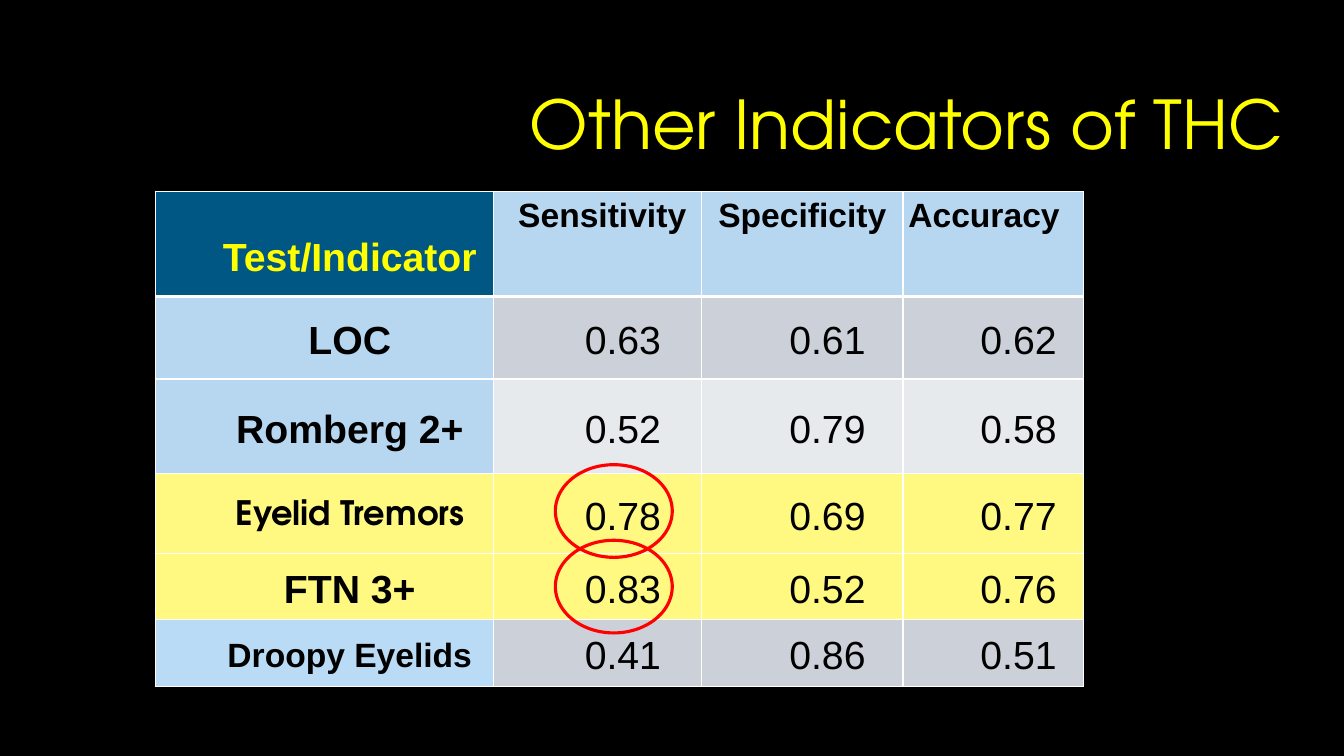
from lxml.etree import SubElement
from pptx import Presentation
from pptx.dml.color import RGBColor
from pptx.enum.shapes import MSO_SHAPE
from pptx.enum.text import MSO_ANCHOR, PP_ALIGN
from pptx.oxml.ns import qn
from pptx.util import Pt

TITLE = "Other Indicators of THC"
CORNER = "Test/Indicator"
# Heading, left margin, right margin
MEASURES = [("Sensitivity", 6.5, 0), ("Specificity", 0, 0), ("Accuracy", 0, 13.3)]
# Indicator, label size, label font, label fill, value fill, values
INDICATORS = [
    ("LOC", 28, "Arial", "sky", "grey", ("0.63", "0.61", "0.62")),
    ("Romberg 2+", 28, "Arial", "sky", "pale grey", ("0.52", "0.79", "0.58")),
    ("Eyelid Tremors", 24, "TeX Gyre Adventor", "highlight", "highlight", ("0.78", "0.69", "0.77")),
    ("FTN 3+", 28, "Arial", "highlight", "highlight", ("0.83", "0.52", "0.76")),
    ("Droopy Eyelids", 24, "Arial", "light sky", "grey", ("0.41", "0.86", "0.51")),
]
COLORS = {
    "black": "000000", "white": "FFFFFF", "yellow": "FFFF00", "red": "FF0000",
    "navy": "015783", "sky": "B7D7F1", "light sky": "BADBF5",
    "grey": "CCD1D9", "pale grey": "E7EAED", "highlight": "FFF981",
}
TABLE_LEFT, TABLE_TOP = 110.9, 136.8
COLUMN_WIDTHS = [241.9, 148.3, 144, 128.9]
ROW_HEIGHTS = [74.9, 59, 67.7, 56.9, 47.5, 47.5]
INDENT = 36
RING_LEFT, RING_WIDTH, RING_HEIGHT = 396.7, 83.5, 66.2
RING_TOPS = [331.9, 385.9]


def rgb(name):
    return RGBColor.from_string(COLORS[name])


def write_text(frame, text, size=28, font="Arial", color="black", bold=False,
               align=PP_ALIGN.CENTER, spacing=1.15):
    frame.word_wrap = True
    paragraph = frame.paragraphs[0]
    paragraph.alignment = align
    paragraph.line_spacing = spacing
    run = paragraph.add_run()
    run.text = text
    run.font.size = Pt(size)
    run.font.name = font
    run.font.bold = bold
    run.font.color.rgb = rgb(color)


def draw_borders(cell, top=1, bottom=1):
    properties = cell._tc.get_or_add_tcPr()
    for side, width in (("L", 1), ("R", 1), ("T", top), ("B", bottom)):
        line = SubElement(properties, qn(f"a:ln{side}"), w=str(int(Pt(width))))
        fill = SubElement(line, qn("a:solidFill"))
        SubElement(fill, qn("a:srgbClr"), val=COLORS["white"])


def fill_cell(table, row, column, text, fill, left=INDENT, right=0, top=0,
              anchor=MSO_ANCHOR.MIDDLE, **text_format):
    cell = table.cell(row, column)
    cell.margin_left, cell.margin_right = Pt(left), Pt(right)
    cell.margin_top, cell.margin_bottom = Pt(top), Pt(0)
    cell.vertical_anchor = anchor
    draw_borders(cell, top=3 if row == 1 else 1, bottom=3 if row == 0 else 1)
    cell.fill.solid()
    cell.fill.fore_color.rgb = rgb(fill)
    write_text(cell.text_frame, text, **text_format)


def add_title(slide):
    box = slide.shapes.add_textbox(Pt(220.3), Pt(40.3), Pt(703.4), Pt(101.5))
    box.text_frame.vertical_anchor = MSO_ANCHOR.MIDDLE
    write_text(box.text_frame, TITLE, size=48, font="TeX Gyre Adventor",
               color="yellow", align=PP_ALIGN.RIGHT, spacing=0.9)


def add_indicator_table(slide):
    table = slide.shapes.add_table(
        len(ROW_HEIGHTS), len(COLUMN_WIDTHS), Pt(TABLE_LEFT), Pt(TABLE_TOP),
        Pt(sum(COLUMN_WIDTHS)), Pt(sum(ROW_HEIGHTS))).table
    table.first_row = table.horz_banding = False
    for column, width in zip(table.columns, COLUMN_WIDTHS):
        column.width = Pt(width)
    for row, height in zip(table.rows, ROW_HEIGHTS):
        row.height = Pt(height)

    fill_cell(table, 0, 0, CORNER, "navy", top=32, anchor=MSO_ANCHOR.TOP,
              color="yellow", bold=True, spacing=1)
    for column, (heading, left, right) in enumerate(MEASURES, 1):
        fill_cell(table, 0, column, heading, "sky", left=left, right=right,
                  anchor=MSO_ANCHOR.TOP, size=24, bold=True)
    for row, (label, size, font, label_fill, value_fill, values) in enumerate(INDICATORS, 1):
        fill_cell(table, row, 0, label, label_fill, size=size, font=font, bold=True)
        for column, value in enumerate(values, 1):
            fill_cell(table, row, column, value, value_fill)


def add_rings(slide):
    for top in RING_TOPS:
        ring = slide.shapes.add_shape(MSO_SHAPE.OVAL, Pt(RING_LEFT), Pt(top),
                                      Pt(RING_WIDTH), Pt(RING_HEIGHT))
        ring.shadow.inherit = False
        ring.fill.background()
        ring.line.color.rgb = rgb("red")
        ring.line.width = Pt(2.25)


def main():
    presentation = Presentation()
    presentation.slide_width, presentation.slide_height = Pt(960), Pt(540)
    slide = presentation.slides.add_slide(presentation.slide_layouts[6])
    slide.background.fill.solid()
    slide.background.fill.fore_color.rgb = rgb("black")
    add_title(slide)
    add_indicator_table(slide)
    add_rings(slide)
    presentation.save("out.pptx")


if __name__ == "__main__":
    main()
